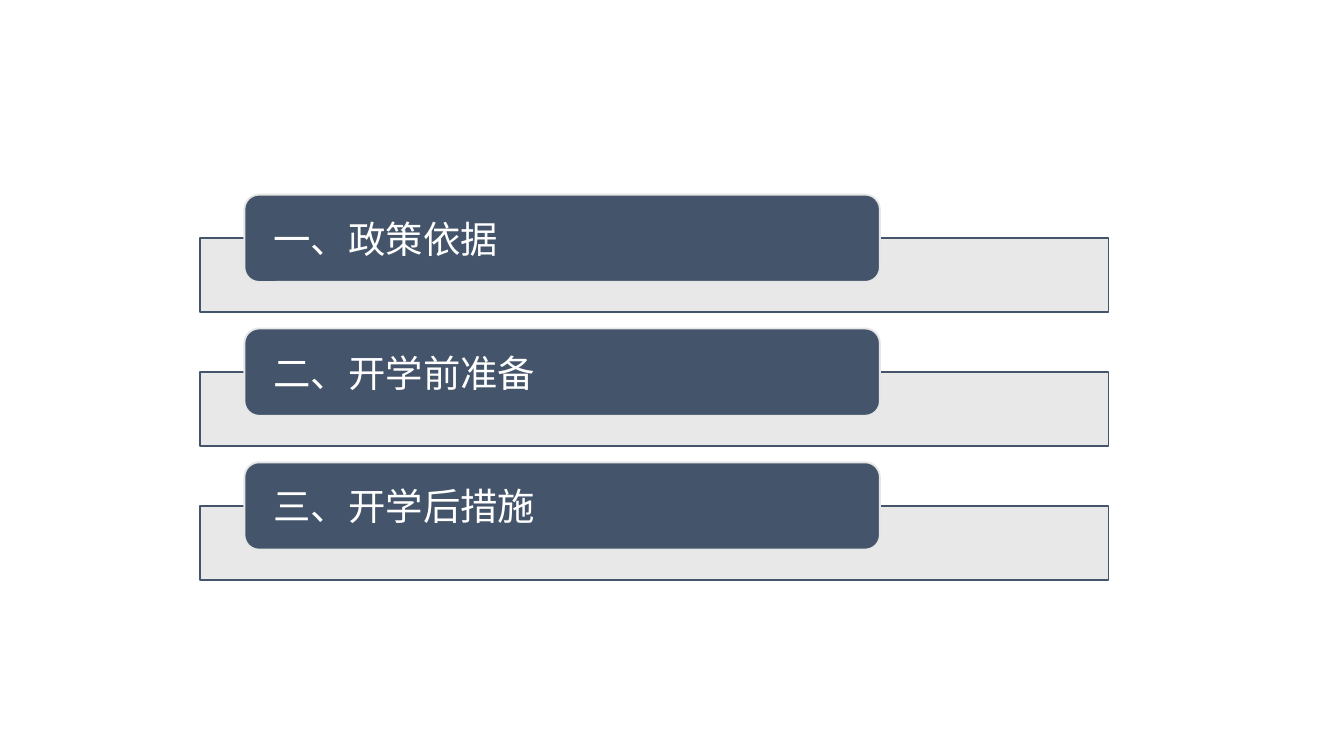
from pptx import Presentation
from pptx.dml.color import RGBColor
from pptx.enum.shapes import MSO_SHAPE as Preset
from pptx.enum.text import MSO_ANCHOR as Anchor, PP_ALIGN as Align
from pptx.oxml.ns import qn
from pptx.util import Cm, Pt
from lxml.etree import SubElement

SLATE = RGBColor(0x44, 0x54, 0x6A)
LIGHT_GRAY = RGBColor(0xE7, 0xE6, 0xE6)
WHITE = RGBColor(0xFF, 0xFF, 0xFF)
FONT = "Noto Sans CJK SC"

SECTIONS = ["一、政策依据", "二、开学前准备", "三、开学后措施"]
FIRST_TOP = 3.68  # cm, top of the first label
ROW_PITCH = 2.53  # cm, from one section to the next
BAR_DROP = 0.82  # cm, from the label's top to the bar's top


def add_box(slide, preset, left, top, width, height, fill, line):
    shape = slide.shapes.add_shape(preset, Cm(left), Cm(top), Cm(width), Cm(height))
    shape.shadow.inherit = False
    shape.fill.solid()
    shape.fill.fore_color.rgb = fill
    shape.line.color.rgb = line
    shape.line.width = Pt(1)
    return shape


def add_bar(slide, top):
    bar = add_box(slide, Preset.RECTANGLE, 3.78, top, 17.17, 1.4, LIGHT_GRAY, SLATE)
    # Slight transparency: 90 % opaque
    color = bar.fill._xPr.find(qn("a:solidFill"))[0]
    SubElement(color, qn("a:alpha"), val="90000")


def add_label(slide, top, text):
    label = add_box(slide, Preset.ROUNDED_RECTANGLE, 4.62, top, 12.01, 1.65,
                    SLATE, LIGHT_GRAY)
    frame = label.text_frame
    frame.word_wrap = True
    frame.vertical_anchor = Anchor.MIDDLE
    frame.margin_left = frame.margin_right = Cm(0.47)
    frame.margin_top = frame.margin_bottom = 0

    paragraph = frame.paragraphs[0]
    paragraph.text = text
    paragraph.alignment = Align.LEFT
    font = paragraph.font
    font.size = Pt(20)
    font.color.rgb = WHITE
    font.name = FONT
    # East Asian typeface for the Chinese characters
    SubElement(font._element, qn("a:ea"), typeface=FONT)


def main():
    presentation = Presentation()
    presentation.slide_width = Cm(25.4)
    presentation.slide_height = Cm(14.29)
    slide = presentation.slides.add_slide(presentation.slide_layouts[6])

    # Agenda: one bar with an overlapping label per section
    for index, text in enumerate(SECTIONS):
        top = FIRST_TOP + index * ROW_PITCH
        add_bar(slide, top + BAR_DROP)
        add_label(slide, top, text)

    presentation.save("out.pptx")


if __name__ == "__main__":
    main()
